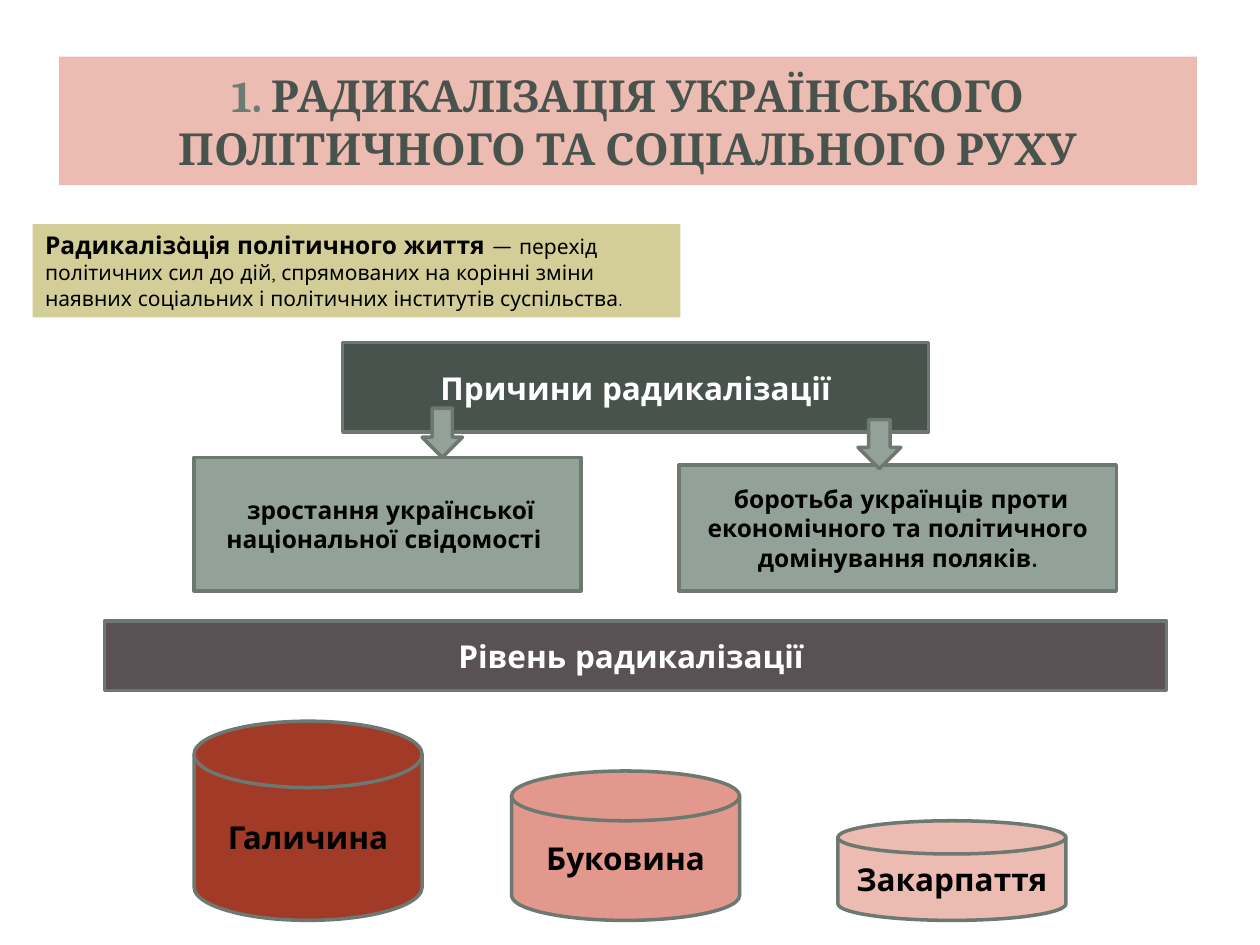
from pptx import Presentation
from pptx.dml.color import RGBColor
from pptx.enum.shapes import MSO_SHAPE as Shape
from pptx.enum.text import MSO_ANCHOR as Anchor, MSO_AUTO_SIZE as AutoSize, PP_ALIGN as Align
from pptx.util import Inches, Pt

WIDTH, HEIGHT = Inches(10), Inches(7.5)
BLACK = RGBColor(0x00, 0x00, 0x00)
WHITE = RGBColor(0xFF, 0xFF, 0xFF)
PINK = RGBColor(0xEC, 0xBB, 0xB2)
ROSE = RGBColor(0xE2, 0x98, 0x8C)
RED = RGBColor(0xA2, 0x3A, 0x28)
SAND = RGBColor(0xD3, 0xCE, 0x98)
SAGE = RGBColor(0x93, 0xA2, 0x99)
GREEN = RGBColor(0x6B, 0x7D, 0x72)
DARK_GREEN = RGBColor(0x47, 0x53, 0x4C)
PLUM = RGBColor(0x5A, 0x51, 0x55)
OUTLINE = RGBColor(0x6D, 0x78, 0x71)

DISK_BOTTOM, DISK_WIDTH, LEVEL_HEIGHT = 97.4, 18.1, 5.27


def place(left, top, width, height):
    """Turn percentages of the slide into lengths."""
    return (int(WIDTH * left / 100), int(HEIGHT * top / 100),
            int(WIDTH * width / 100), int(HEIGHT * height / 100))


def add_span(para, text, size=14, color=BLACK, bold=True, font="Quicksand"):
    """Append formatted text to a paragraph."""
    span = para.add_run()
    span.text = text
    span.font.name = font
    span.font.size = Pt(size)
    span.font.bold = bold
    span.font.color.rgb = color


def add_title(page):
    """Format the title placeholder as a pink banner."""
    title = page.shapes.title
    title.left, title.top, title.width, title.height = place(4.7, 6, 90.3, 13.6)
    title.fill.solid()
    title.fill.fore_color.rgb = PINK
    frame = title.text_frame
    frame.word_wrap = True
    frame.auto_size = AutoSize.NONE
    frame.vertical_anchor = Anchor.MIDDLE
    para = frame.paragraphs[0]
    para.alignment = Align.CENTER
    add_span(para, "1. ", size=25.2, color=GREEN, font="Cambria")
    add_span(para, "РАДИКАЛІЗАЦІЯ УКРАЇНСЬКОГО ПОЛІТИЧНОГО ТА СОЦІАЛЬНОГО РУХУ",
             size=25.2, color=DARK_GREEN, font="Cambria")


def add_definition(page):
    """Add the definition of the term on a sand panel."""
    box = page.shapes.add_textbox(*place(2.6, 23.73, 51.4, 9.87))
    box.fill.solid()
    box.fill.fore_color.rgb = SAND
    box.text_frame.word_wrap = True
    box.text_frame.auto_size = AutoSize.SHAPE_TO_FIT_TEXT
    para = box.text_frame.paragraphs[0]
    add_span(para, "Радикалізàція політичного життя ")
    add_span(para, "— ", bold=False)
    add_span(para, "перехід політичних сил до дій, спрямованих на корінні зміни "
             "наявних соціальних і політичних інститутів суспільства.",
             size=12, bold=False)


def add_block(page, kind, area, fill, text="", **style):
    """Add an outlined shape with centred text."""
    block = page.shapes.add_shape(kind, *place(*area))
    block.shadow.inherit = False
    block.fill.solid()
    block.fill.fore_color.rgb = fill
    block.line.color.rgb = OUTLINE
    block.line.width = Pt(2)
    if text:
        frame = block.text_frame
        frame.word_wrap = True
        frame.vertical_anchor = Anchor.MIDDLE
        frame.paragraphs[0].alignment = Align.CENTER
        add_span(frame.paragraphs[0], text, **style)


def add_causes(page):
    """Add the causes with arrows from their heading."""
    add_block(page, Shape.RECTANGLE, (27.2, 36.27, 46.5, 9.47), DARK_GREEN,
              "Причини радикалізації", size=18, color=WHITE)
    for area, text in (
        ((15.4, 48.4, 30.7, 14.13), " зростання української національної свідомості "),
        ((53.9, 49.2, 34.7, 13.33),
         " боротьба українців проти економічного та політичного домінування поляків."),
    ):
        add_block(page, Shape.RECTANGLE, area, SAGE, text)
    for area in ((33.5, 43.2, 3.2, 5.2), (68.1, 44.4, 3.4, 5.2)):
        add_block(page, Shape.DOWN_ARROW, area, SAGE)


def add_levels(page):
    """Add the regions as disks whose height shows their level."""
    add_block(page, Shape.RECTANGLE, (8.3, 65.73, 84.3, 7.33), PLUM,
              "Рівень радикалізації ", size=18, color=WHITE)
    for region, left, level, fill in (
        ("Галичина", 15.4, 4, RED),
        ("Буковина", 40.6, 3, ROSE),
        ("Закарпаття", 66.5, 2, PINK),
    ):
        height = level * LEVEL_HEIGHT
        add_block(page, Shape.FLOWCHART_MAGNETIC_DISK,
                  (left, DISK_BOTTOM - height, DISK_WIDTH, height), fill, region, size=18)


def main():
    """Build and save the slide."""
    deck = Presentation()
    deck.slide_width, deck.slide_height = WIDTH, HEIGHT
    page = deck.slides.add_slide(deck.slide_layouts[5])
    add_title(page)
    add_definition(page)
    add_causes(page)
    add_levels(page)
    deck.save("out.pptx")


if __name__ == "__main__":
    main()
